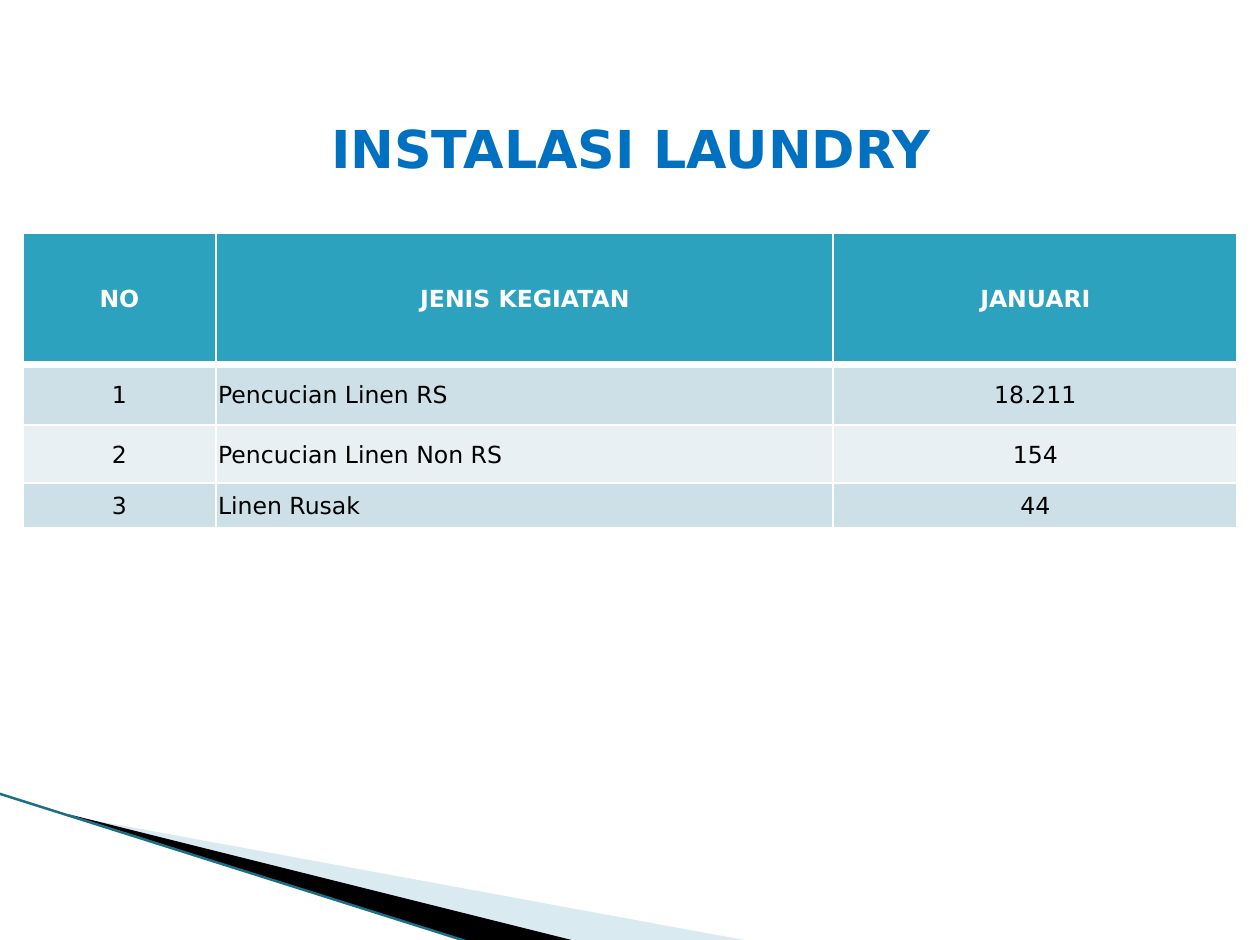
from lxml.etree import SubElement
from pptx import Presentation
from pptx.dml.color import RGBColor
from pptx.enum.text import MSO_ANCHOR, PP_ALIGN
from pptx.enum.shapes import MSO_CONNECTOR
from pptx.oxml.ns import qn
from pptx.util import Inches, Pt

COLORS = {"title": "0070C0", "header": "2DA2BF", "odd": "CDE0E8", "even": "E8F0F4",
          "white": "FFFFFF", "black": "000000", "pale": "A0CBDC", "edge": "1B7088"}
FONT = "DejaVu Sans"
TITLE = "INSTALASI LAUNDRY"
ROWS = [
    ("NO", "JENIS KEGIATAN", "JANUARI"),
    ("1", "Pencucian Linen RS", "18.211"),
    ("2", "Pencucian Linen Non RS", "154"),
    ("3", "Linen Rusak", "44"),
]
COL_WIDTHS = [1.03, 3.28, 2.15]
ROW_HEIGHTS = [0.7, 0.32, 0.31, 0.24]
WEDGES = [
    ((0.52, 3.65, 2.79, 1.05), [(0.37, 4.34), (4.01, 5.01), (3.05, 5.01)], "pale", 40),
    ((-0.04, 4.22, 2.78, 0.61), [(0.36, 4.33), (3.08, 5.01), (2.49, 5.01)], "black", 100),
]
EDGE = [(-0.01, 4.22), (2.49, 5.01)]


def rgb(name):
    return RGBColor.from_string(COLORS[name])


def set_attrs(obj, values):
    for name, value in values.items():
        setattr(obj, name, value)


def write(tf, text, align, size, color, bold):
    p = tf.paragraphs[0]
    p.alignment = align
    r = p.add_run()
    r.text = text
    set_attrs(r.font, {"name": FONT, "size": Pt(size), "bold": bold})
    r.font.color.rgb = rgb(color)


def set_frame(sp, frame):
    left, top, width, height = [Inches(v) for v in frame]
    dx, dy = sp.left - left, sp.top - top
    set_attrs(sp, {"left": left, "top": top, "width": width, "height": height})
    outline = next(sp._element.iter(qn("a:path")))
    outline.set("w", str(width))
    outline.set("h", str(height))
    for pt in outline.iter(qn("a:pt")):
        pt.set("x", str(int(pt.get("x")) + dx))
        pt.set("y", str(int(pt.get("y")) + dy))


def add_wedge(s, frame, points, color, alpha):
    pts = [(Inches(x), Inches(y)) for x, y in points]
    fb = s.shapes.build_freeform(*pts[0])
    fb.add_line_segments(pts[1:], close=True)
    sp = fb.convert_to_shape()
    set_frame(sp, frame)
    sp.shadow.inherit = False
    sp.fill.solid()
    sp.fill.fore_color.rgb = rgb(color)
    sp.line.fill.background()
    if alpha < 100:
        clr = next(sp.fill._xPr.iter(qn("a:srgbClr")))
        SubElement(clr, qn("a:alpha"), val=str(alpha * 1000))


def add_borders(cell, widths):
    tc_pr = cell._tc.get_or_add_tcPr()
    for i, (side, width) in enumerate(widths.items()):
        ln = SubElement(tc_pr, qn(f"a:ln{side}"), w=str(Pt(width)))
        fill = SubElement(ln, qn("a:solidFill"))
        SubElement(fill, qn("a:srgbClr"), val=COLORS["white"])
        tc_pr.insert(i, ln)


def add_edge(s):
    ends = [Inches(v) for point in EDGE for v in point]
    line = s.shapes.add_connector(MSO_CONNECTOR.STRAIGHT, *ends)
    line.line.color.rgb = rgb("edge")
    line.line.width = Pt(0.95)
    SubElement(line._element.spPr, qn("a:effectLst"))


def add_grid(s):
    table = s.shapes.add_table(len(ROWS), len(COL_WIDTHS), Inches(0.12), Inches(1.24),
                               Inches(sum(COL_WIDTHS)), Inches(sum(ROW_HEIGHTS))).table
    for col, width in zip(table.columns, COL_WIDTHS):
        col.width = Inches(width)
    for i, (row, height) in enumerate(zip(ROWS, ROW_HEIGHTS)):
        table.rows[i].height = Inches(height)
        head = i == 0
        fill = "header" if head else "odd" if i % 2 else "even"
        insets = (0.1, 0.05, 0.1, 0.05) if head else (0.01, 0.01, 0.01, 0)
        for j, text in enumerate(row):
            cell = table.cell(i, j)
            sides = ("left", "top", "right", "bottom")
            set_attrs(cell, {f"margin_{k}": Inches(v) for k, v in zip(sides, insets)})
            cell.vertical_anchor = MSO_ANCHOR.MIDDLE
            cell.fill.solid()
            cell.fill.fore_color.rgb = rgb(fill)
            add_borders(cell, {"L": 1, "R": 1, "T": 3 if i == 1 else 1, "B": 3 if head else 1})
            align = PP_ALIGN.LEFT if j == 1 and not head else PP_ALIGN.CENTER
            write(cell.text_frame, text, align, 9, "white" if head else "black", head)


def add_title(s):
    title = s.shapes.title
    set_attrs(title, {"left": Inches(0.34), "top": Inches(0.2),
                      "width": Inches(6.03), "height": Inches(0.83)})
    tf = title.text_frame
    set_attrs(tf, {"word_wrap": True, "vertical_anchor": MSO_ANCHOR.MIDDLE,
                   "margin_left": Inches(0.06), "margin_right": Inches(0.06),
                   "margin_top": Inches(0.37), "margin_bottom": Inches(0.03)})
    write(tf, TITLE, PP_ALIGN.CENTER, 20, "title", True)


def main():
    prs = Presentation()
    set_attrs(prs, {"slide_width": Inches(6.7), "slide_height": Inches(5)})
    s = prs.slides.add_slide(prs.slide_layouts[5])
    s.background.fill.solid()
    s.background.fill.fore_color.rgb = rgb("white")
    for wedge in WEDGES:
        add_wedge(s, *wedge)
    add_edge(s)
    add_grid(s)
    add_title(s)
    prs.save("out.pptx")


if __name__ == "__main__":
    main()
